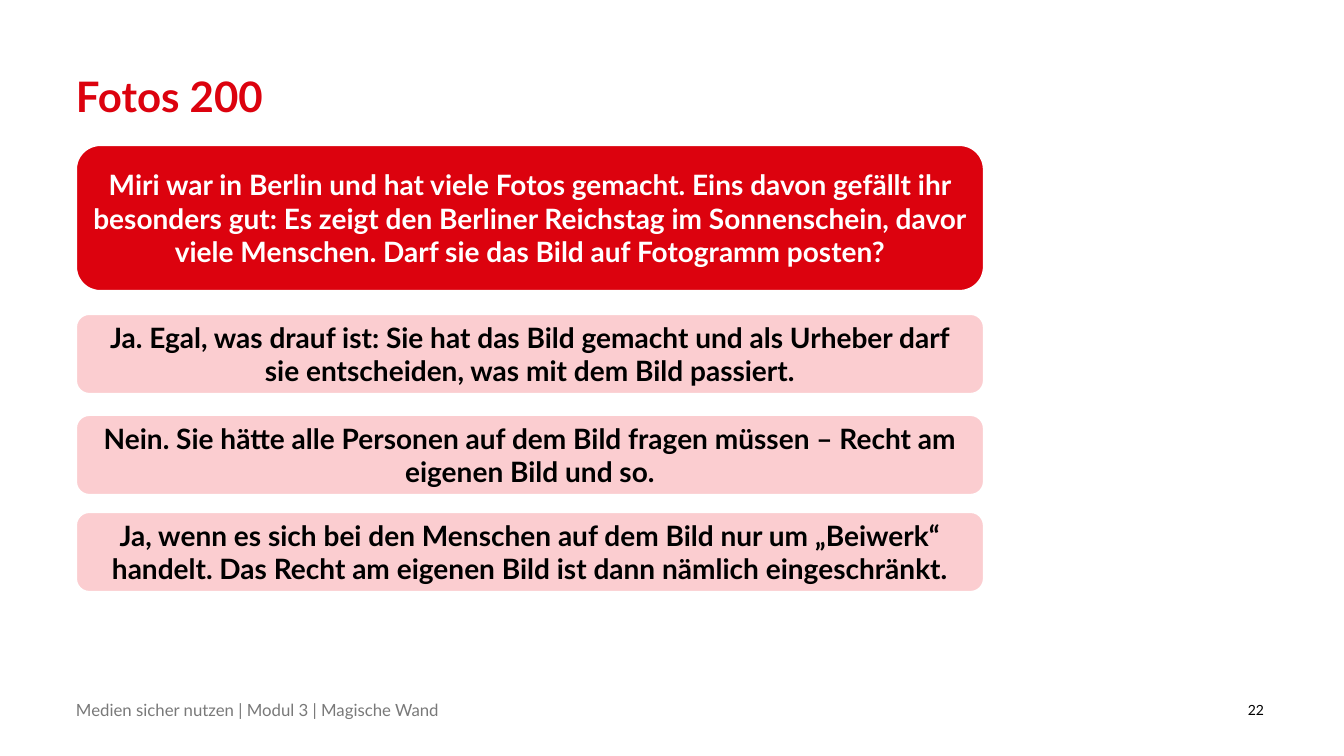
from lxml.etree import SubElement
from pptx import Presentation
from pptx.dml.color import RGBColor
from pptx.enum.shapes import MSO_SHAPE
from pptx.enum.text import MSO_ANCHOR, PP_ALIGN
from pptx.oxml.ns import qn
from pptx.util import Pt

# Content
TITLE = "Fotos 200"
QUESTION = (
    "Miri war in Berlin und hat viele Fotos gemacht. Eins davon gefällt ihr "
    "besonders gut: Es zeigt den Berliner Reichstag im Sonnenschein, davor "
    "viele Menschen. Darf sie das Bild auf Fotogramm posten?"
)
ANSWERS = [  # top in px, text
    (314, "Ja. Egal, was drauf ist: Sie hat das Bild gemacht und als Urheber "
          "darf sie entscheiden, was mit dem Bild passiert."),
    (415, "Nein. Sie hätte alle Personen auf dem Bild fragen müssen – Recht am "
          "eigenen Bild und so."),
    (512, "Ja, wenn es sich bei den Menschen auf dem Bild nur um „Beiwerk“ "
          "handelt. Das Recht am eigenen Bild ist dann nämlich eingeschränkt."),
]
FOOTER = "Medien sicher nutzen | Modul 3 | Magische Wand"
PAGE_NUMBER = "22"

# Style and layout, lengths in px
FONT = "Lato"
RED, PINK, WHITE, BLACK, GREY = "DC020E", "FBC1C5", "FFFFFF", "000000", "797979"
WIDTH, HEIGHT = 1344, 756
LEFT, CARD_WIDTH = 76, 908
QUESTION_TOP, QUESTION_HEIGHT, ANSWER_HEIGHT = 145, 146, 80
FOOTER_TOP, FOOTER_HEIGHT = 702, 16


def px(length):
    return round(length * 914400 / 100.8)


def color(hex_code):
    return RGBColor.from_string(hex_code)


def write(frame, text, size, hex_code, bold=False, align=PP_ALIGN.LEFT,
          anchor=MSO_ANCHOR.MIDDLE):
    frame.word_wrap = True
    frame.vertical_anchor = anchor
    paragraph = frame.paragraphs[0]
    paragraph.alignment = align
    run = paragraph.add_run()
    run.text = text
    run.font.name = FONT
    run.font.size = Pt(size)
    run.font.bold = bold
    run.font.color.rgb = color(hex_code)
    return paragraph


def add_label(left, top, width, height, *args, **style):
    frame = slide.shapes.add_textbox(px(left), px(top), px(width), px(height)).text_frame
    frame.margin_left = frame.margin_right = frame.margin_top = frame.margin_bottom = 0
    return write(frame, *args, **style)


def add_card(top, height, text, fill, text_color, opacity=100):
    card = slide.shapes.add_shape(
        MSO_SHAPE.ROUNDED_RECTANGLE, px(LEFT), px(top), px(CARD_WIDTH), px(height))
    card.shadow.inherit = False
    card.fill.solid()
    card.fill.fore_color.rgb = color(fill)
    if opacity < 100:
        fill_color = card.fill._xPr.find(qn("a:solidFill"))[0]
        SubElement(fill_color, qn("a:alpha"), val=str(opacity * 1000))
    card.line.color.rgb = color(WHITE)
    card.line.width = Pt(1.5)
    write(card.text_frame, text, 20, text_color, bold=True, align=PP_ALIGN.CENTER)


presentation = Presentation()
presentation.slide_width, presentation.slide_height = px(WIDTH), px(HEIGHT)
slide = presentation.slides.add_slide(presentation.slide_layouts[6])

# Title
title = add_label(LEFT, 76, 1190, 46, TITLE, 30, RED, bold=True, anchor=MSO_ANCHOR.TOP)
title.line_spacing = 0.9

# Footer and page number
add_label(LEFT, FOOTER_TOP, 992, FOOTER_HEIGHT, FOOTER, 12, GREY)
add_label(1193, FOOTER_TOP, 71, FOOTER_HEIGHT, PAGE_NUMBER, 10, BLACK, align=PP_ALIGN.RIGHT)

# Question and answers
add_card(QUESTION_TOP, QUESTION_HEIGHT, QUESTION, RED, WHITE)
for answer_top, answer in ANSWERS:
    add_card(answer_top, ANSWER_HEIGHT, answer, PINK, BLACK, opacity=80)

presentation.save("out.pptx")
